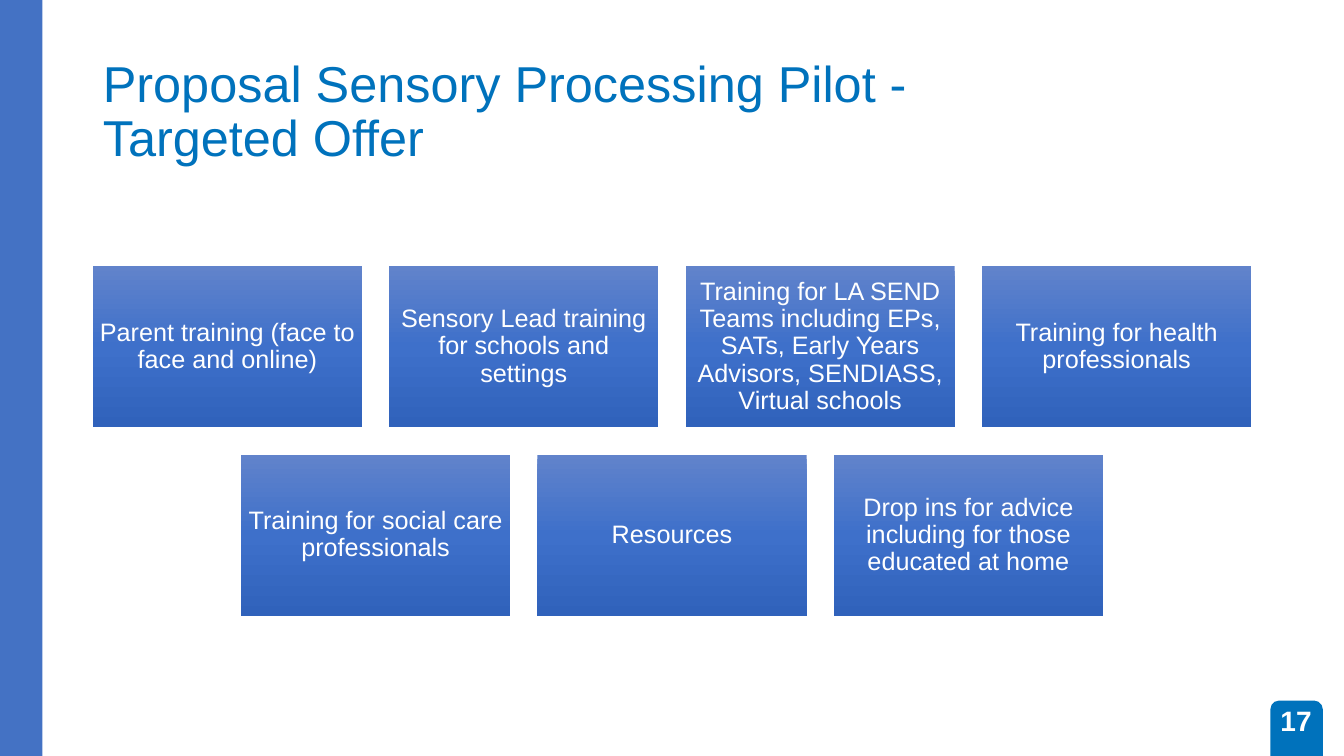
from copy import deepcopy
from dataclasses import dataclass

from pptx import Presentation
from pptx.dml.color import RGBColor
from pptx.enum import shapes, text
from pptx.oxml import ns
from pptx.util import Inches, Pt

FONT = "Arial"
TEAL = RGBColor(0x00, 0x72, 0xBC)
BLUE = RGBColor(0x44, 0x72, 0xC4)
WHITE = RGBColor(0xFF, 0xFF, 0xFF)
CARD_GRADIENT = (
    (0, RGBColor(0x61, 0x83, 0xCB)),
    (0.5, RGBColor(0x3E, 0x70, 0xCA)),
    (1, RGBColor(0x30, 0x62, 0xBB)),
)
CARD_W, CARD_H, CARD_GAP = 2.67, 1.6, 0.27
ROWS_CENTER = 6.665
FIRST_ROW_TOP = 2.64


@dataclass(frozen=True)
class Box:
    left: float
    top: float
    width: float
    height: float

    def emu(self) -> tuple:
        return tuple(Inches(v) for v in (self.left, self.top, self.width, self.height))


OFFER_ROWS = (
    (
        "Parent training (face to face and online)",
        "Sensory Lead training for schools and settings",
        "Training for LA SEND Teams including EPs, SATs, Early Years Advisors, SENDIASS, Virtual schools",
        "Training for health professionals",
    ),
    (
        "Training for social care professionals",
        "Resources",
        "Drop ins for advice including for those educated at home",
    ),
)


def add_plain_shape(s, kind, box: Box, color: RGBColor):
    """Add a flat shape without outline or shadow."""
    sp = s.shapes.add_shape(kind, *box.emu())
    sp.shadow.inherit = False
    sp.line.fill.background()
    sp.fill.solid()
    sp.fill.fore_color.rgb = color
    return sp


def write(sp, words: str, size: int, color: RGBColor, align, bold: bool = False):
    """Fill a shape with one vertically centred paragraph and return it."""
    tf = sp.text_frame
    tf.word_wrap = True
    tf.auto_size = text.MSO_AUTO_SIZE.NONE
    tf.vertical_anchor = text.MSO_ANCHOR.MIDDLE
    p = tf.paragraphs[0]
    p.text = words
    p.alignment = align
    p.font.name = FONT
    p.font.size = Pt(size)
    p.font.bold = bold
    p.font.color.rgb = color
    return p


def apply_card_gradient(sp) -> None:
    sp.fill.gradient()
    sp.fill.gradient_angle = 270
    stops = sp._element.spPr.find(".//" + ns.qn("a:gsLst"))
    stops.append(deepcopy(stops[-1]))
    for stop, (position, color) in zip(sp.fill.gradient_stops, CARD_GRADIENT):
        stop.position = position
        stop.color.rgb = color


def add_card(s, words: str, box: Box) -> None:
    sp = add_plain_shape(s, shapes.MSO_SHAPE.RECTANGLE, box, BLUE)
    apply_card_gradient(sp)
    p = write(sp, words, 18, WHITE, text.PP_ALIGN.CENTER)
    p.line_spacing = 0.9
    tf = sp.text_frame
    tf.margin_left = tf.margin_right = tf.margin_top = tf.margin_bottom = Inches(0.07)


def add_offer_rows(s) -> None:
    """Lay out the cards in rows centred on a common axis."""
    step = CARD_W + CARD_GAP
    for row, offers in enumerate(OFFER_ROWS):
        left = ROWS_CENTER - (len(offers) * step - CARD_GAP) / 2
        top = FIRST_ROW_TOP + row * (CARD_H + CARD_GAP)
        for col, offer in enumerate(offers):
            add_card(s, offer, Box(left + col * step, top, CARD_W, CARD_H))


def add_title(s) -> None:
    title = s.shapes.title
    title.left, title.top, title.width, title.height = Box(0.92, 0.4, 10.23, 1.45).emu()
    p = write(title, "Proposal Sensory Processing Pilot - Targeted Offer", 36, TEAL, text.PP_ALIGN.LEFT)
    p.line_spacing = 0.9


def add_page_number(s) -> None:
    add_plain_shape(s, shapes.MSO_SHAPE.ROUNDED_RECTANGLE, Box(12.6, 6.95, 0.52, 0.75), TEAL)
    number = s.shapes.add_textbox(*Box(12.59, 6.95, 0.53, 0.4).emu())
    write(number, "17", 20, WHITE, text.PP_ALIGN.CENTER, bold=True)


def main() -> None:
    prs = Presentation()
    prs.slide_width, prs.slide_height = Inches(13.33), Inches(7.5)
    s = prs.slides.add_slide(prs.slide_layouts[5])
    add_plain_shape(s, shapes.MSO_SHAPE.RECTANGLE, Box(-0.07, -0.08, 0.49, 7.84), BLUE)
    add_title(s)
    add_page_number(s)
    add_offer_rows(s)
    prs.save("out.pptx")


if __name__ == "__main__":
    main()
